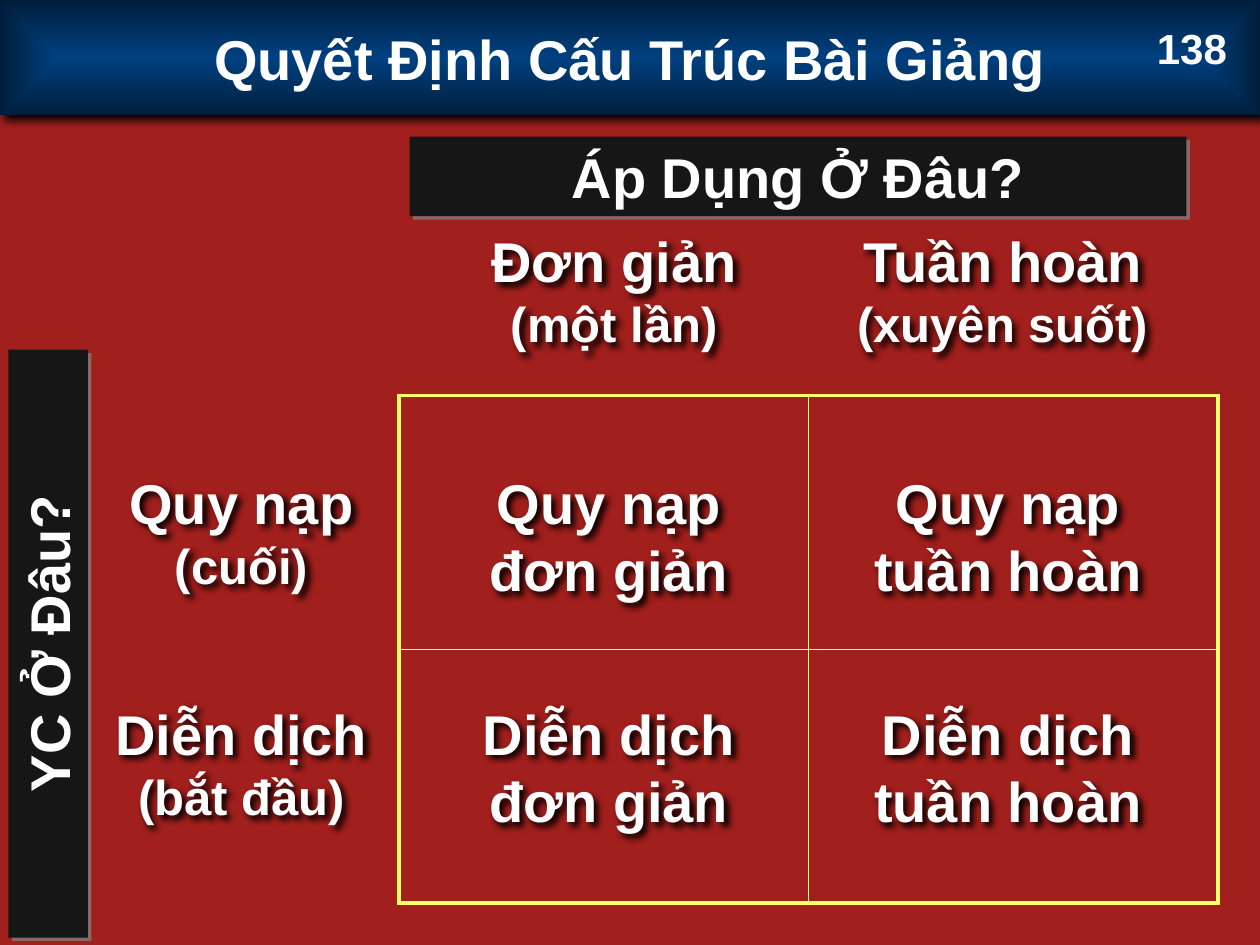
"""Builds the lecture structure slide with its two-by-two grid."""
from lxml.etree import SubElement
from pptx import Presentation
from pptx.dml.color import RGBColor
from pptx.enum.shapes import MSO_SHAPE
from pptx.enum.text import MSO_ANCHOR, MSO_AUTO_SIZE, PP_ALIGN
from pptx.oxml.ns import qn
from pptx.util import Pt

HUES = {"back": "A11F1C", "blue": "004080", "navy": "001E3B", "bar": "161616",
        "gray": "808080", "black": "000000", "white": "FFFFFF", "rule": "FFFF66"}


def rgb(name):
    return RGBColor.from_string(HUES[name])


class Deck:
    font, big, small = "Arial", 32, 28

    def __init__(self, wide, high):
        self.prs = Presentation()
        self.prs.slide_width, self.prs.slide_height = Pt(wide), Pt(high)
        self.slide = self.prs.slides.add_slide(self.prs.slide_layouts[5])
        fill = self.slide.background.fill
        fill.solid()
        fill.fore_color.rgb = rgb("back")

    def shade(self, shape, hue, alpha, blur, dist):
        shape.shadow.inherit = False
        glow = SubElement(shape._element.spPr.find(qn("a:effectLst")), qn("a:outerShdw"),
                          blurRad=str(Pt(blur)), dist=str(Pt(dist)), dir="2700000",
                          algn="ctr", rotWithShape="0")
        tint = SubElement(glow, qn("a:srgbClr"), val=HUES[hue])
        SubElement(tint, qn("a:alpha"), val=str(alpha * 1000))

    def letter(self, shape, lines, sizes, align=PP_ALIGN.CENTER):
        frame = shape.text_frame
        frame.word_wrap = True
        frame.text = "\n".join(lines)
        for para, size in zip(frame.paragraphs, sizes):
            para.alignment = align
            font = para.font
            font.name, font.size, font.bold = self.font, Pt(size), True
            font.color.rgb = rgb("white")

    def title(self, text, wide, high):
        shape = self.slide.shapes.title
        shape.left, shape.top, shape.width, shape.height = 0, 0, Pt(wide), Pt(high)
        shape.fill.gradient()
        for stop, hue in zip(shape.fill.gradient_stops, ("blue", "navy")):
            stop.color.rgb = rgb(hue)
        grad = shape._element.spPr.find(qn("a:gradFill"))
        grad.remove(grad.find(qn("a:lin")))
        ring = SubElement(grad, qn("a:path"), path="shape")
        SubElement(ring, qn("a:fillToRect"), l="50000", t="50000", r="50000", b="50000")
        self.shade(shape, "black", 100, 5, 3)
        self.letter(shape, [text], [self.big])
        shape.text_frame.vertical_anchor = MSO_ANCHOR.MIDDLE

    def bar(self, text, box, turn=0):
        shape = self.slide.shapes.add_shape(MSO_SHAPE.RECTANGLE, *map(Pt, box))
        shape.rotation = turn
        shape.fill.solid()
        shape.fill.fore_color.rgb = rgb("bar")
        shape.line.fill.background()
        self.shade(shape, "gray", 75, 0, 2.8)
        self.letter(shape, [text], [self.big])
        shape.text_frame.vertical_anchor = MSO_ANCHOR.TOP

    def label(self, lines, box):
        shape = self.slide.shapes.add_textbox(*map(Pt, box))
        self.shade(shape, "black", 100, 4, 3)
        self.letter(shape, lines, [self.big, self.small])
        shape.text_frame.auto_size = MSO_AUTO_SIZE.SHAPE_TO_FIT_TEXT

    def number(self, text, box):
        shape = self.slide.shapes.add_textbox(*map(Pt, box))
        self.letter(shape, [text], [24], PP_ALIGN.LEFT)
        shape.text_frame.word_wrap = False

    def grid(self, box, rows, cols):
        table = self.slide.shapes.add_table(rows, cols, *map(Pt, box)).table
        table.first_row = table.horz_banding = False
        for row in range(rows):
            for col in range(cols):
                cell = table.cell(row, col)
                cell.fill.background()
                outer = {"L": col == 0, "R": col == cols - 1,
                         "T": row == 0, "B": row == rows - 1}
                props = cell._tc.get_or_add_tcPr()
                for spot, (side, edge) in enumerate(outer.items()):
                    line = SubElement(props, qn(f"a:ln{side}"), w=str(Pt(2.25 if edge else 1)))
                    SubElement(SubElement(line, qn("a:solidFill")), qn("a:srgbClr"),
                               val=HUES["rule"])
                    props.insert(spot, line)


def main():
    deck = Deck(720, 540)
    deck.title("Quyết Định Cấu Trúc Bài Giảng", 720, 66)
    deck.bar("Áp Dụng Ở Đâu?", (234, 78, 444, 45.5))
    deck.number("138", (654, 9.5, 54.5, 36))
    deck.bar("YC Ở Đâu?", (-140.5, 345, 336, 45.5), 270)
    deck.label(["Đơn giản", "(một lần)"], (222, 126, 258, 79))
    deck.label(["Tuần hoàn", "(xuyên suốt)"], (420, 126, 306, 79))
    deck.label(["Quy nạp", "(cuối)"], (54, 264, 168, 79))
    deck.label(["Diễn dịch", "(bắt đầu)"], (36, 396, 204, 79))
    deck.grid((228, 226, 468, 290), 2, 2)
    for row, mode in enumerate(("Quy nạp", "Diễn dịch")):
        for col, kind in enumerate(("đơn giản", "tuần hoàn")):
            deck.label([f"{mode} {kind}"], (264 + 228 * col, 264 + 132 * row, 168, 85))
    deck.prs.save("out.pptx")


if __name__ == "__main__":
    main()
